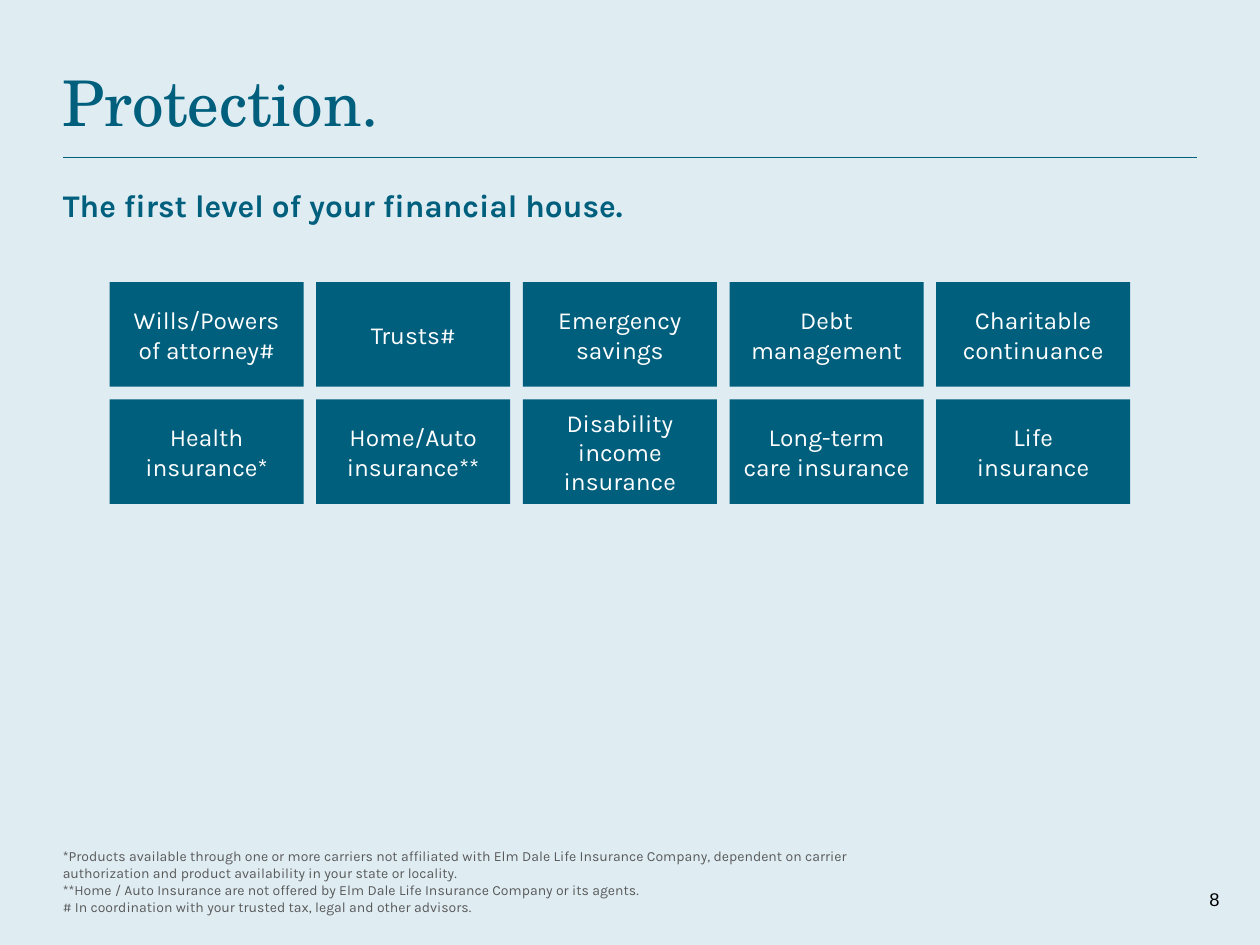
"""Build the Protection slide: a grid of financial topics with footnotes."""
from lxml import etree
from pptx import Presentation
from pptx.dml.color import RGBColor
from pptx.enum.shapes import MSO_CONNECTOR, MSO_SHAPE
from pptx.enum.text import MSO_ANCHOR, PP_ALIGN
from pptx.oxml.ns import qn
from pptx.util import Inches, Pt

RECT, STRAIGHT = MSO_SHAPE.RECTANGLE, MSO_CONNECTOR.STRAIGHT
MIDDLE, CENTER, LEFT = MSO_ANCHOR.MIDDLE, PP_ALIGN.CENTER, PP_ALIGN.LEFT

TITLE = "Protection."
SUBTITLE = "The first level of your financial house."
TOPICS = [
    ["Wills/Powers of attorney#", "Trusts#", "Emergency\nsavings",
     "Debt\nmanagement", "Charitable\ncontinuance"],
    ["Health\ninsurance*", "Home/Auto\ninsurance**", "Disability\nincome\ninsurance",
     "Long-term\ncare insurance", "Life\ninsurance"],
]
FOOTNOTES = "\n".join([
    "*Products available through one or more carriers not affiliated with Elm Dale Life "
    "Insurance Company, dependent on carrier authorization and product availability in "
    "your state or locality.",
    "**Home / Auto Insurance are not offered by Elm Dale Life Insurance Company or its agents.",
    "# In coordination with your trusted tax, legal and other advisors.",
])
PAGE = "8"

THEME = {
    "teal": "005F7D",
    "tint": "2E87B0",
    "tint_alpha": 15,
    "title": ("TeX Gyre Schola", 36, "005F7D", False),
    "subtitle": ("Karla", 18, "005F7D", True),
    "topic": ("Karla", 14, "FFFFFF", False),
    "note": ("Karla", 8, "595959", False),
    "page": ("Arial", 10.5, "000000", False),
}

W, H = 10, 7.5
MARGIN = 0.05 * W
GRID_LEFT, GRID_TOP = 0.87, 2.24
CELL_W, CELL_H, GAP = 1.54, 0.83, 0.1


def write(sp, text, style, align=LEFT):
    name, size, color, bold = THEME[style]
    tf = sp.text_frame
    tf.word_wrap = True
    tf.text = text
    for p in tf.paragraphs:
        p.alignment = align
        for r in p.runs:
            r.font.name, r.font.size, r.font.bold = name, Pt(size), bold
            r.font.color.rgb = RGBColor.from_string(color)


def add_text(s, box, text, style, flush=False):
    sp = s.shapes.add_textbox(*map(Inches, box))
    if flush:
        tf = sp.text_frame
        tf.margin_left = tf.margin_top = tf.margin_bottom = 0
    write(sp, text, style)


def add_rect(s, box, color):
    sp = s.shapes.add_shape(RECT, *map(Inches, box))
    sp.shadow.inherit = False
    sp.fill.solid()
    sp.fill.fore_color.rgb = RGBColor.from_string(color)
    sp.line.fill.background()
    return sp


def add_background(s):
    sp = add_rect(s, (0, 0, W, H), THEME["tint"])
    clr = sp.fill._xPr.find(qn("a:solidFill")).find(qn("a:srgbClr"))
    etree.SubElement(clr, qn("a:alpha")).set("val", str(THEME["tint_alpha"] * 1000))


def add_rule(s, y):
    line = s.shapes.add_connector(STRAIGHT, *map(Inches, (MARGIN, y, W - MARGIN, y)))
    line.line.color.rgb = RGBColor.from_string(THEME["teal"])
    line.line.width = Pt(1)
    etree.SubElement(line._element.spPr, qn("a:effectLst"))


def add_topics(s):
    for row, topics in enumerate(TOPICS):
        for col, topic in enumerate(topics):
            x = GRID_LEFT + col * (CELL_W + GAP)
            y = GRID_TOP + row * (CELL_H + GAP)
            sp = add_rect(s, (x, y, CELL_W, CELL_H), THEME["teal"])
            sp.text_frame.vertical_anchor = MIDDLE
            write(sp, topic, "topic", CENTER)


def main():
    prs = Presentation()
    prs.slide_width, prs.slide_height = Inches(W), Inches(H)
    s = prs.slides.add_slide(prs.slide_layouts[6])
    add_background(s)
    add_text(s, (0.95 * W, 7, 0.46, 0.28), PAGE, "page")
    add_text(s, (MARGIN - 0.1, 6.68, 6.84, 0.64), FOOTNOTES, "note")
    add_text(s, (MARGIN, 0.5, 8.36, 0.52), TITLE, "title", flush=True)
    add_text(s, (MARGIN, 1.48, 7.36, 0.52), SUBTITLE, "subtitle", flush=True)
    add_rule(s, H / 6)
    add_topics(s)
    prs.save("out.pptx")


if __name__ == "__main__":
    main()
